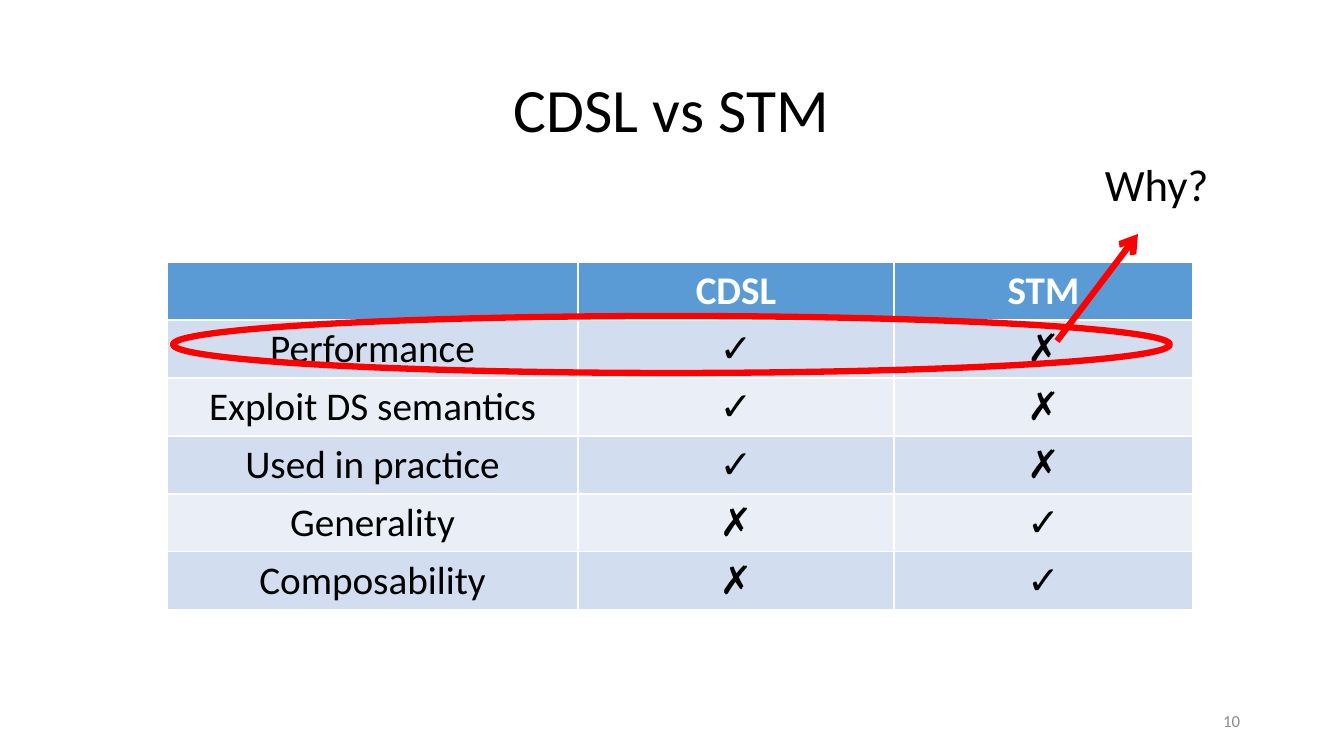
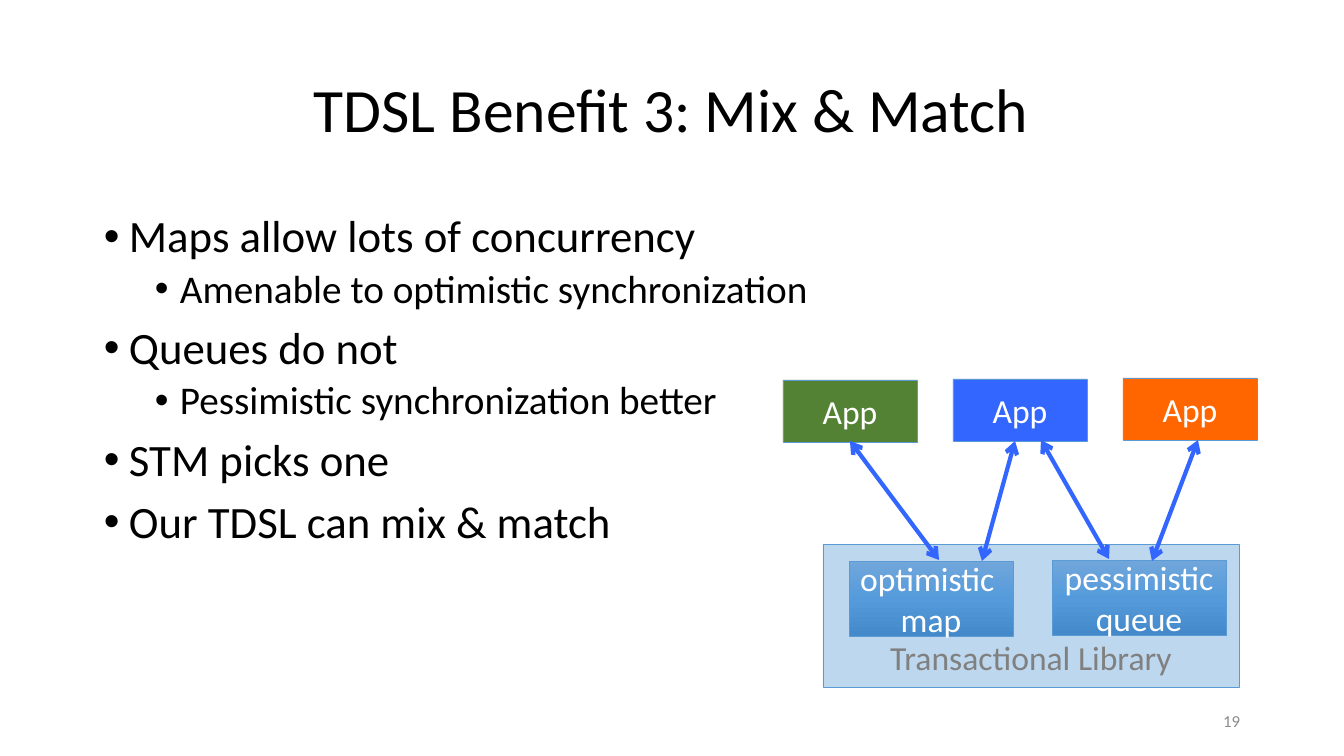
import copy

import pptx
import pptx.dml.color
import pptx.enum.shapes
import pptx.enum.text
import pptx.oxml
import pptx.oxml.ns
import pptx.util

SCALE = 914400 / 100.8
SLIDE_SIZE = (1344, 756)
FONT = "Calibri"
BLACK, WHITE, GREY, PAGE_GREY = "000000", "FFFFFF", "808080", "8C8C8C"
RED, LINK_BLUE, EDGE_BLUE = "FF0000", "3366FF", "5B9BD5"
HEADER_FILL, BAND_FILLS = "5B9BD5", ("D2DEEF", "EAEFF7")
LIBRARY_FILL = "BDD7EE"
PART_GRADIENT = ((0, "71A6DB"), (0.5, "559BDB"), (1, "448ACA"))
APP_FILLS = ("548235", LINK_BLUE, "FF6600")
ALIGN = pptx.enum.text.PP_ALIGN
ANCHOR = pptx.enum.text.MSO_ANCHOR
SHAPE = pptx.enum.shapes.MSO_SHAPE
qn = pptx.oxml.ns.qn

COMPARISON = (
    ("", "CDSL", "STM"),
    ("Performance", "✓", "✗"),
    ("Exploit DS semantics", "✓", "✗"),
    ("Used in practice", "✓", "✗"),
    ("Generality", "✗", "✓"),
    ("Composability", "✗", "✓"),
)
BENEFITS = (
    (0, "Maps allow lots of concurrency"),
    (1, "Amenable to optimistic synchronization"),
    (0, "Queues do not"),
    (1, "Pessimistic synchronization better"),
    (0, "STM picks one"),
    (0, "Our TDSL can mix & match"),
)


def px(length):
    """Turn pixels into EMU."""
    return pptx.util.Emu(round(length * SCALE))


def rgb(code):
    """Turn a hex string into a colour."""
    return pptx.dml.color.RGBColor.from_string(code)


def write(paragraph, text, size, color=BLACK, align=ALIGN.CENTER, bold=False):
    """Add text to a paragraph, one run for each line."""
    paragraph.alignment = align
    for number, line in enumerate(text.split("\n")):
        if number:
            paragraph.add_line_break()
        run = paragraph.add_run()
        run.text = line
        run.font.name = FONT
        run.font.size = pptx.util.Pt(size)
        run.font.bold = bold
        run.font.color.rgb = rgb(color)


def add_text_frame(slide, x, y, w, h, anchor=ANCHOR.TOP):
    """Add a wrapping text box and return its frame."""
    frame = slide.shapes.add_textbox(px(x), px(y), px(w), px(h)).text_frame
    frame.word_wrap = True
    frame.vertical_anchor = anchor
    return frame


def add_outline(slide, preset, x, y, w, h, color, width):
    """Add an unfilled, shadowless preset shape."""
    outline = slide.shapes.add_shape(preset, px(x), px(y), px(w), px(h))
    outline.shadow.inherit = False
    outline.fill.background()
    outline.line.color.rgb = rgb(color)
    outline.line.width = pptx.util.Pt(width)
    return outline


def add_box(slide, x, y, w, h, fill, text, color=WHITE):
    """Add a thin-edged rectangle with a centred label."""
    box = add_outline(slide, SHAPE.RECTANGLE, x, y, w, h, EDGE_BLUE, 0.5)
    if isinstance(fill, str):
        box.fill.solid()
        box.fill.fore_color.rgb = rgb(fill)
    else:
        box.fill.gradient()
        box.fill.gradient_angle = 270
        stop_list = box.fill._xPr.find(".//" + qn("a:gsLst"))
        stop_list.insert(1, copy.deepcopy(stop_list[0]))
        for stop, (position, shade) in zip(box.fill.gradient_stops, fill):
            stop.position = position
            stop.color.rgb = rgb(shade)
    box.text_frame.word_wrap = True
    box.text_frame.vertical_anchor = ANCHOR.MIDDLE
    write(box.text_frame.paragraphs[0], text, 24, color)
    return box


def add_arrow(slide, start, end, color, width, ends=("tailEnd",)):
    """Add a straight line with open arrowheads at the named ends."""
    arrow = slide.shapes.add_connector(
        pptx.enum.shapes.MSO_CONNECTOR.STRAIGHT, *map(px, (*start, *end)))
    arrow.line.color.rgb = rgb(color)
    arrow.line.width = pptx.util.Pt(width)
    line = arrow.line._get_or_add_ln()
    for end_name in ends:
        line.append(pptx.oxml.parse_xml(
            f'<a:{end_name} {pptx.oxml.ns.nsdecls("a")} type="arrow"/>'))
    line.addnext(pptx.oxml.parse_xml(f'<a:effectLst {pptx.oxml.ns.nsdecls("a")}/>'))


def add_titled_slide(deck, title, page):
    """Add a title-only slide with its title and page number."""
    slide = deck.slides.add_slide(deck.slide_layouts[5])
    heading = slide.shapes.title
    heading.left, heading.top, heading.width, heading.height = map(px, (92, 40, 1159, 146))
    heading.text_frame.vertical_anchor = ANCHOR.MIDDLE
    paragraph = heading.text_frame.paragraphs[0]
    paragraph.line_spacing = 0.9
    write(paragraph, title, 44)
    footer = add_text_frame(slide, 948, 701, 302, 40, ANCHOR.MIDDLE)
    write(footer.paragraphs[0], page, 12, PAGE_GREY, ALIGN.RIGHT)
    return slide


def add_comparison(slide, x, y):
    """Add the comparison table with its marked row and question."""
    widths, row_height = (411, 316, 299), 58
    table = slide.shapes.add_table(
        len(COMPARISON), len(widths), px(x), px(y),
        px(sum(widths)), px(row_height * len(COMPARISON))).table
    for column, width in zip(table.columns, widths):
        column.width = px(width)
    for row_number, labels in enumerate(COMPARISON):
        header = row_number == 0
        for column_number, label in enumerate(labels):
            cell = table.cell(row_number, column_number)
            cell.fill.solid()
            cell.fill.fore_color.rgb = rgb(
                HEADER_FILL if header else BAND_FILLS[(row_number - 1) % 2])
            if label:
                write(cell.text_frame.paragraphs[0], label, 28,
                      WHITE if header else BLACK, bold=header)
    add_outline(slide, SHAPE.OVAL, x + 6, y + 54, 997, 57, RED, 4.5)
    question = add_text_frame(slide, x + 928, y - 110, 150, 65)
    write(question.paragraphs[0], "Why?", 32, align=ALIGN.LEFT)
    add_arrow(slide, (x + 890, y + 79), (x + 971, y - 28), RED, 4.5)


def add_benefits(slide, x, y, w, h):
    """Add the two-level bullet list."""
    frame = add_text_frame(slide, x, y, w, h)
    for number, (level, text) in enumerate(BENEFITS):
        paragraph = frame.add_paragraph() if number else frame.paragraphs[0]
        paragraph.level = level
        paragraph.line_spacing = 0.9
        paragraph.space_before = pptx.util.Pt((10, 5)[level])
        write(paragraph, text, (32, 28)[level], align=ALIGN.LEFT)
        properties = paragraph._p.get_or_add_pPr()
        properties.set("marL", str(px((25, 76)[level])))
        properties.set("indent", str(-px(25)))
        for bullet in ('buFont typeface="Arial"', 'buChar char="•"'):
            properties.append(pptx.oxml.parse_xml(
                f'<a:{bullet} {pptx.oxml.ns.nsdecls("a")}/>'))


def add_library_diagram(slide, x, y):
    """Add the apps linked to the parts of the library."""
    library = add_box(slide, x + 40, y + 166, 416, 143, LIBRARY_FILL,
                      "Transactional Library", GREY)
    library.text_frame.vertical_anchor = ANCHOR.BOTTOM
    library.text_frame.margin_bottom = px(10)
    add_box(slide, x + 269, y + 182, 174, 75, PART_GRADIENT, "pessimistic queue")
    add_box(slide, x + 66, y + 183, 164, 75, PART_GRADIENT, "optimistic \nmap")
    for number, fill in enumerate(APP_FILLS):
        add_box(slide, x + 170 * number, y + 2 - number, 134, 62, fill, "App")
    links = ((67, 63, 156, 182), (232, 63, 199, 183),
             (258, 62, 326, 181), (415, 62, 369, 183))
    for app_x, app_y, part_x, part_y in links:
        add_arrow(slide, (x + app_x, y + app_y), (x + part_x, y + part_y),
                  LINK_BLUE, 3, ("headEnd", "tailEnd"))


def main():
    """Build and save the slides."""
    deck = pptx.Presentation()
    deck.slide_width, deck.slide_height = map(px, SLIDE_SIZE)
    comparison = add_titled_slide(deck, "CDSL vs STM", "10")
    add_comparison(comparison, 167, 262)
    benefit = add_titled_slide(deck, "TDSL Benefit 3: Mix & Match", "19")
    add_benefits(benefit, 94, 209, 1159, 480)
    add_library_diagram(benefit, 783, 378)
    deck.save("out.pptx")


if __name__ == "__main__":
    main()
